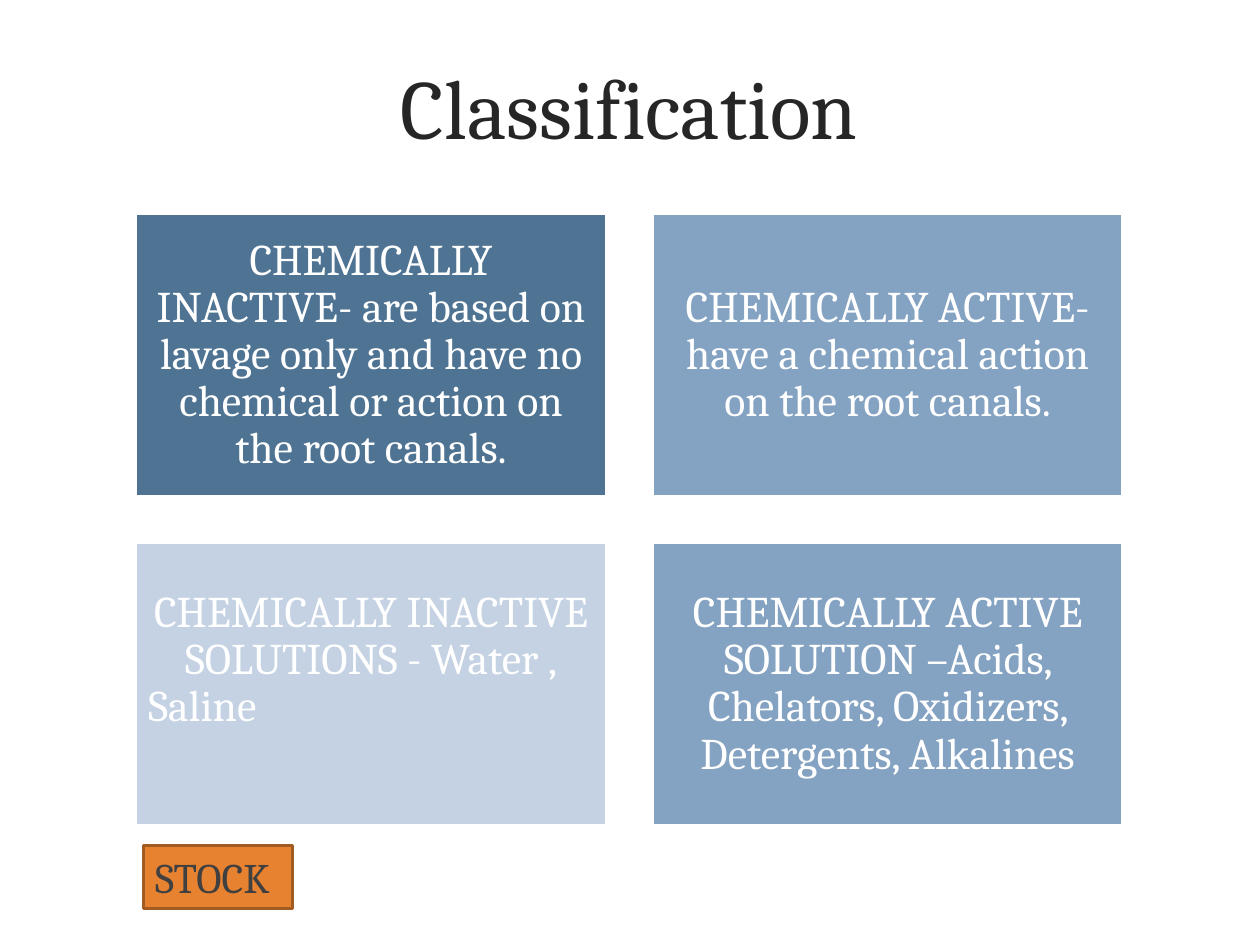
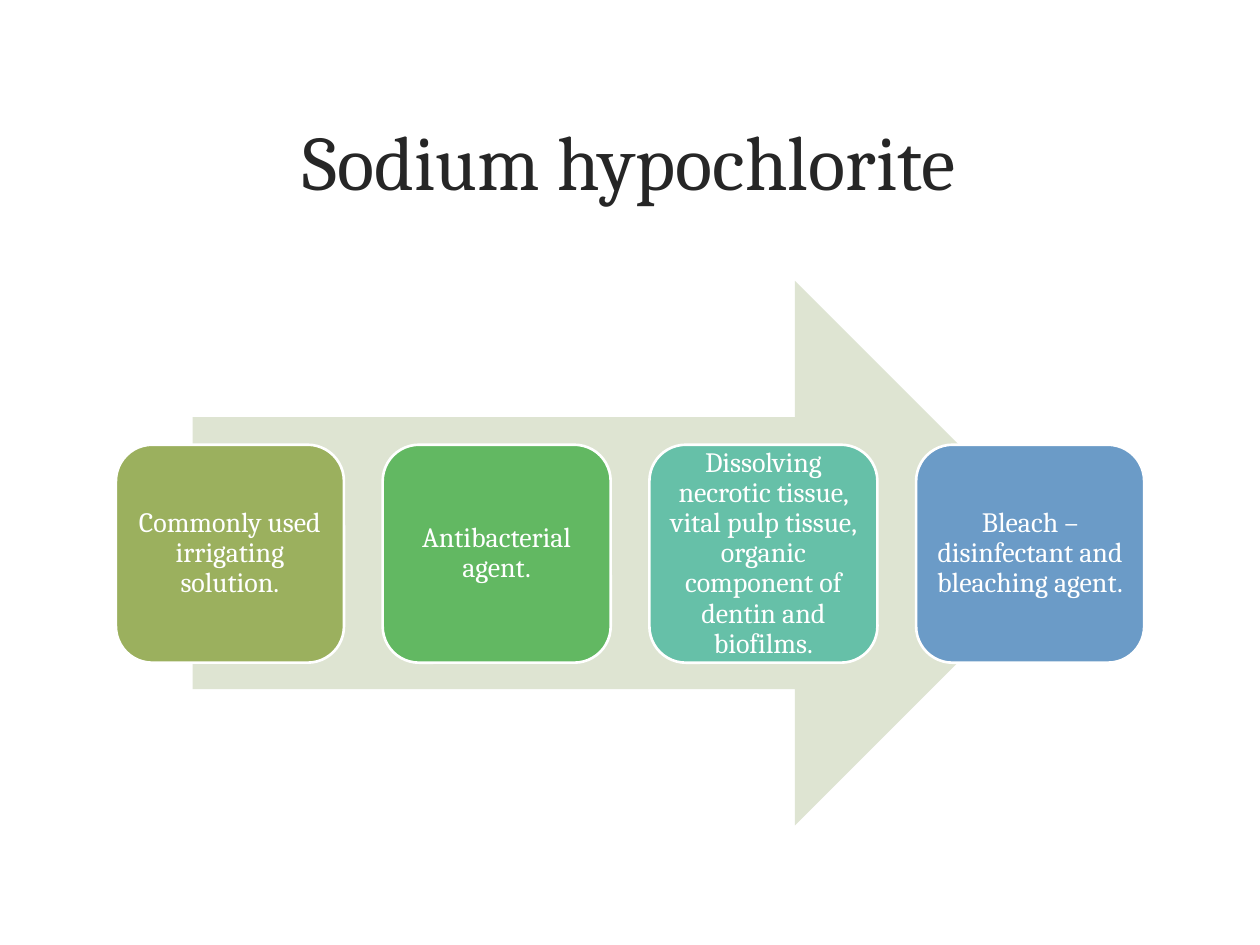
from pptx import Presentation
from pptx.dml.color import RGBColor
from pptx.enum.shapes import MSO_SHAPE
from pptx.enum.text import MSO_ANCHOR, PP_ALIGN
from pptx.util import Inches, Pt

COLUMNS = 100
ROWS = 75


def color(hex_value):
    return RGBColor.from_string(hex_value)


class Deck:
    font_name = "Cambria"
    title_color = "262626"
    white = "FFFFFF"

    def __init__(self):
        self.presentation = Presentation()
        self.presentation.slide_width = Inches(10)
        self.presentation.slide_height = Inches(7.5)
        self.slide = None

    def across(self, columns):
        return round(self.presentation.slide_width * columns / COLUMNS)

    def down(self, rows):
        return round(self.presentation.slide_height * rows / ROWS)

    def place(self, left, top, width, height):
        return self.across(left), self.down(top), self.across(width), self.down(height)

    def new_slide(self, title, title_top, title_size):
        self.slide = self.presentation.slides.add_slide(self.presentation.slide_layouts[6])
        text_box = self.slide.shapes.add_textbox(*self.place(6, title_top, 87.9, 15.8))
        self.add_text(text_box, [(title, PP_ALIGN.CENTER)], title_size, self.title_color)

    def add_text(self, shape, paragraphs, size, text_color, spacing=1.0, inset=1.0, bottom=None):
        frame = shape.text_frame
        frame.word_wrap = True
        frame.vertical_anchor = MSO_ANCHOR.MIDDLE
        frame.margin_left = frame.margin_right = self.across(inset)
        frame.margin_top = self.down(inset)
        frame.margin_bottom = self.down(inset if bottom is None else bottom)
        for index, (text, alignment) in enumerate(paragraphs):
            paragraph = frame.add_paragraph() if index else frame.paragraphs[0]
            paragraph.alignment = alignment
            paragraph.line_spacing = spacing
            run = paragraph.add_run()
            run.text = text
            run.font.name = self.font_name
            run.font.size = Pt(size)
            run.font.color.rgb = color(text_color)

    def block(self, kind, position, fill, line=None):
        shape = self.slide.shapes.add_shape(kind, *self.place(*position))
        shape.shadow.inherit = False
        shape.fill.solid()
        shape.fill.fore_color.rgb = color(fill)
        if line:
            shape.line.color.rgb = color(line)
            shape.line.width = Pt(1.5)
        else:
            shape.line.fill.background()
        return shape

    def card(self, kind, position, fill, paragraphs, size, inset, bottom=None):
        shape = self.block(kind, position, fill, self.white)
        self.add_text(shape, paragraphs, size, self.white, 0.9, inset, bottom)

    def tag(self, text, position, fill, line, text_color):
        shape = self.block(MSO_SHAPE.RECTANGLE, position, fill, line)
        self.add_text(shape, [(text, PP_ALIGN.LEFT)], 24, text_color, inset=0.9)


def build_classification(deck):
    deck.new_slide("Classification", 0.5, 48)
    center = PP_ALIGN.CENTER
    classes = [
        ("4F7393", [("CHEMICALLY INACTIVE- are based on lavage only and have no "
                     "chemical or action on the root canals.", center)], 1),
        ("84A2C1", [("CHEMICALLY ACTIVE- have a chemical action on the root canals.", center)], 1),
        ("C4D2E3", [("CHEMICALLY INACTIVE SOLUTIONS - Water ,", center),
                    ("Saline", PP_ALIGN.LEFT)], 4.75),
        ("84A2C1", [("CHEMICALLY ACTIVE SOLUTION –Acids, Chelators, Oxidizers, "
                     "Detergents, Alkalines", center)], 1),
    ]
    for index, (fill, paragraphs, bottom) in enumerate(classes):
        row, column = divmod(index, 2)
        position = (10.8 + 41 * column, 17 + 26.1 * row, 37.3, 22.4)
        deck.card(MSO_SHAPE.RECTANGLE, position, fill, paragraphs, 25, 1, bottom)
    deck.tag("STOCK", (11.4, 67.1, 11.8, 5), "E68230", "A25C22", "404040")


def build_sodium_hypochlorite(deck):
    deck.new_slide("Sodium hypochlorite", 4.8, 44)
    deck.block(MSO_SHAPE.RIGHT_ARROW, (15.3, 22.3, 69.4, 43.2), "DEE4D2")
    properties = [
        ("9BB05E", "Commonly used irrigating solution."),
        ("62B862", "Antibacterial agent."),
        ("66C0A8", "Dissolving necrotic tissue, vital pulp tissue, organic component "
                   "of dentin and biofilms."),
        ("6B9BC7", "Bleach – disinfectant and bleaching agent."),
    ]
    for index, (fill, text) in enumerate(properties):
        position = (9.2 + 21.17 * index, 35.3, 18.1, 17.3)
        deck.card(MSO_SHAPE.ROUNDED_RECTANGLE, position, fill,
                  [(text, PP_ALIGN.CENTER)], 16, 0.7)


def main():
    deck = Deck()
    build_classification(deck)
    build_sodium_hypochlorite(deck)
    deck.presentation.save("out.pptx")


if __name__ == "__main__":
    main()
